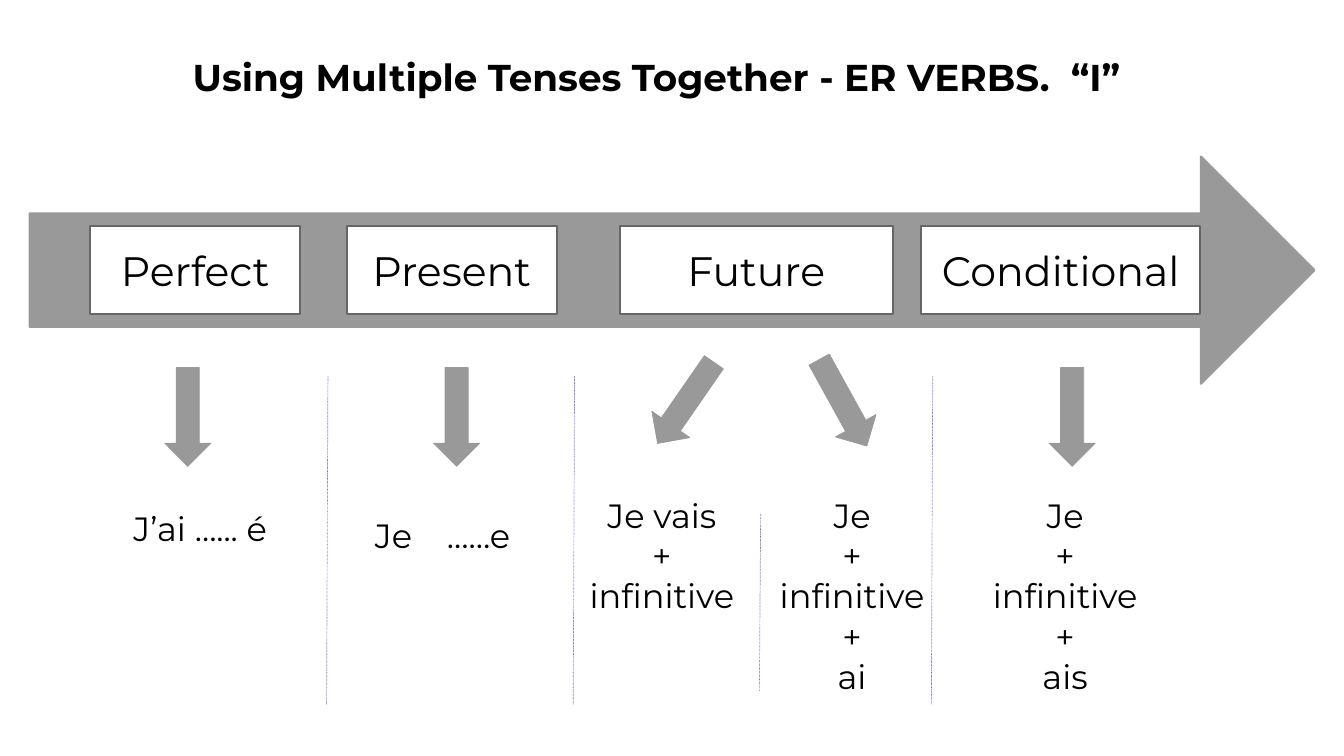
"""Build a slide that lines up French tenses for ER verbs along a time arrow."""

from dataclasses import dataclass

import lxml.etree
import pptx
import pptx.dml.color
import pptx.enum.dml
import pptx.enum.shapes
import pptx.enum.text
import pptx.oxml.ns
import pptx.util

BLACK = pptx.dml.color.RGBColor(0x00, 0x00, 0x00)
WHITE = pptx.dml.color.RGBColor(0xFF, 0xFF, 0xFF)
ARROW_GREY = pptx.dml.color.RGBColor(0x99, 0x99, 0x99)
BORDER_GREY = pptx.dml.color.RGBColor(0x66, 0x66, 0x66)
DIVIDER_PURPLE = pptx.dml.color.RGBColor(0x78, 0x6E, 0xC8)

FONT = "Montserrat"
SLIDE_WIDTH = pptx.util.Inches(20)
SLIDE_HEIGHT = pptx.util.Inches(11.25)
GRID_COLUMNS = 20
GRID_ROWS = 11.25

Shapes = pptx.enum.shapes.MSO_SHAPE
Align = pptx.enum.text.PP_ALIGN
Anchor = pptx.enum.text.MSO_ANCHOR


@dataclass(frozen=True)
class Area:
    left: float
    top: float
    width: float
    height: float

    def lengths(self) -> tuple[int, int, int, int]:
        return column(self.left), row(self.top), column(self.width), row(self.height)


@dataclass(frozen=True)
class Tense:
    name: str
    left: float
    width: float


@dataclass(frozen=True)
class Formula:
    lines: tuple[str, ...]
    left: float
    top: float
    height: float
    arrow_left: float
    arrow_top: float = 5.47
    arrow_rotation: float = 0
    text_start: float = 0.2
    tab_stop: float | None = None


@dataclass(frozen=True)
class Divider:
    column: float
    top: float = 5.6
    bottom: float = 10.48


TENSES = (
    Tense("Perfect", 1.34, 3.13),
    Tense("Present", 5.16, 3.13),
    Tense("Future", 9.22, 4.07),
    Tense("Conditional", 13.71, 4.15),
)
FORMULAS = (
    Formula(("J’ai …... é",), 1.2, 7.36, 1.01, 2.45),
    Formula(("Je\t……e",), 4.85, 7.46, 2.01, 6.45, text_start=0.73, tab_stop=1.07),
    Formula(("Je vais", "+", "infinitive"), 8.07, 7.16, 2.01, 9.86, 5.26, 34.7),
    Formula(("Je", "+", "infinitive", "+", "ai"), 10.9, 7.16, 2.01, 12.2, 5.26, 331.1),
    Formula(("Je", "+", "infinitive", "+", "ais"), 14.07, 7.16, 2.01, 15.61),
)
DIVIDERS = (Divider(4.88), Divider(8.55), Divider(13.88), Divider(11.32, 7.65, 10.29))


def column(count: float) -> int:
    """Return the length of a number of grid columns."""
    return round(SLIDE_WIDTH * count / GRID_COLUMNS)


def row(count: float) -> int:
    """Return the length of a number of grid rows."""
    return round(SLIDE_HEIGHT * count / GRID_ROWS)


def add_tab_stop(paragraph, position: float) -> None:
    """Give a paragraph one left tab stop."""
    tabs = lxml.etree.SubElement(
        paragraph._p.get_or_add_pPr(), pptx.oxml.ns.qn("a:tabLst")
    )
    tab = lxml.etree.SubElement(tabs, pptx.oxml.ns.qn("a:tab"))
    tab.set("pos", str(column(position)))
    tab.set("algn", "l")


def write_text(
    shape,
    lines: tuple[str, ...],
    *,
    size: float,
    bold: bool = False,
    inset: float = 0.2,
    start: float | None = None,
    anchor=Anchor.TOP,
    tab_stop: float | None = None,
) -> None:
    """Fill a shape with one formatted paragraph per line."""
    frame = shape.text_frame
    frame.word_wrap = True
    frame.auto_size = pptx.enum.text.MSO_AUTO_SIZE.NONE
    frame.vertical_anchor = anchor
    frame.margin_left = column(inset if start is None else start)
    frame.margin_right = column(inset)
    frame.margin_top = frame.margin_bottom = row(inset)
    for index, line in enumerate(lines):
        paragraph = frame.add_paragraph() if index else frame.paragraphs[0]
        paragraph.alignment = Align.CENTER if tab_stop is None else Align.LEFT
        if tab_stop is not None:
            add_tab_stop(paragraph, tab_stop)
        run = paragraph.add_run()
        run.text = line
        run.font.name = FONT
        run.font.size = pptx.util.Pt(size)
        run.font.bold = bold
        run.font.color.rgb = BLACK


def add_figure(slide, kind, area: Area, fill, line, line_width: float):
    """Add a flat preset shape."""
    shape = slide.shapes.add_shape(kind, *area.lengths())
    shape.shadow.inherit = False
    shape.fill.solid()
    shape.fill.fore_color.rgb = fill
    shape.line.color.rgb = line
    shape.line.width = pptx.util.Pt(line_width)
    return shape


def add_tense(slide, tense: Tense) -> None:
    """Add a tense box on the time arrow."""
    area = Area(tense.left, 3.37, tense.width, 1.3)
    shape = add_figure(slide, Shapes.RECTANGLE, area, WHITE, BORDER_GREY, 2.25)
    write_text(shape, (tense.name,), size=44, inset=0.1, anchor=Anchor.MIDDLE)


def add_formula(slide, formula: Formula) -> None:
    """Add a formula with the arrow that leads to it."""
    area = Area(formula.arrow_left, formula.arrow_top, 0.69, 1.47)
    arrow = add_figure(slide, Shapes.DOWN_ARROW, area, ARROW_GREY, ARROW_GREY, 0.75)
    arrow.rotation = formula.arrow_rotation
    area = Area(formula.left, formula.top, 3.56, formula.height)
    box = slide.shapes.add_textbox(*area.lengths())
    write_text(
        box,
        formula.lines,
        size=36,
        start=formula.text_start,
        tab_stop=formula.tab_stop,
    )


def add_divider(slide, divider: Divider) -> None:
    """Add a slightly slanted dotted line."""
    connector = slide.shapes.add_connector(
        pptx.enum.shapes.MSO_CONNECTOR.STRAIGHT,
        column(divider.column),
        row(divider.top),
        column(divider.column - 0.02),
        row(divider.bottom),
    )
    connector.line.color.rgb = DIVIDER_PURPLE
    connector.line.width = pptx.util.Pt(0.75)
    connector.line.dash_style = pptx.enum.dml.MSO_LINE.ROUND_DOT
    lxml.etree.SubElement(connector._element.spPr, pptx.oxml.ns.qn("a:effectLst"))


def main() -> None:
    """Build and save the presentation."""
    presentation = pptx.Presentation()
    presentation.slide_width = SLIDE_WIDTH
    presentation.slide_height = SLIDE_HEIGHT
    slide = presentation.slides.add_slide(presentation.slide_layouts[5])
    title = slide.shapes.title
    title.left, title.top, title.width, title.height = Area(2.18, 0.61, 15.18, 1.22).lengths()
    write_text(title, ("Using Multiple Tenses Together - ER VERBS.  “I”",), size=40, bold=True)
    area = Area(0.44, 2.33, 19.12, 3.38)
    add_figure(slide, Shapes.RIGHT_ARROW, area, ARROW_GREY, ARROW_GREY, 2.25)
    for tense in TENSES:
        add_tense(slide, tense)
    for formula in FORMULAS:
        add_formula(slide, formula)
    for divider in DIVIDERS:
        add_divider(slide, divider)
    presentation.save("out.pptx")


if __name__ == "__main__":
    main()
